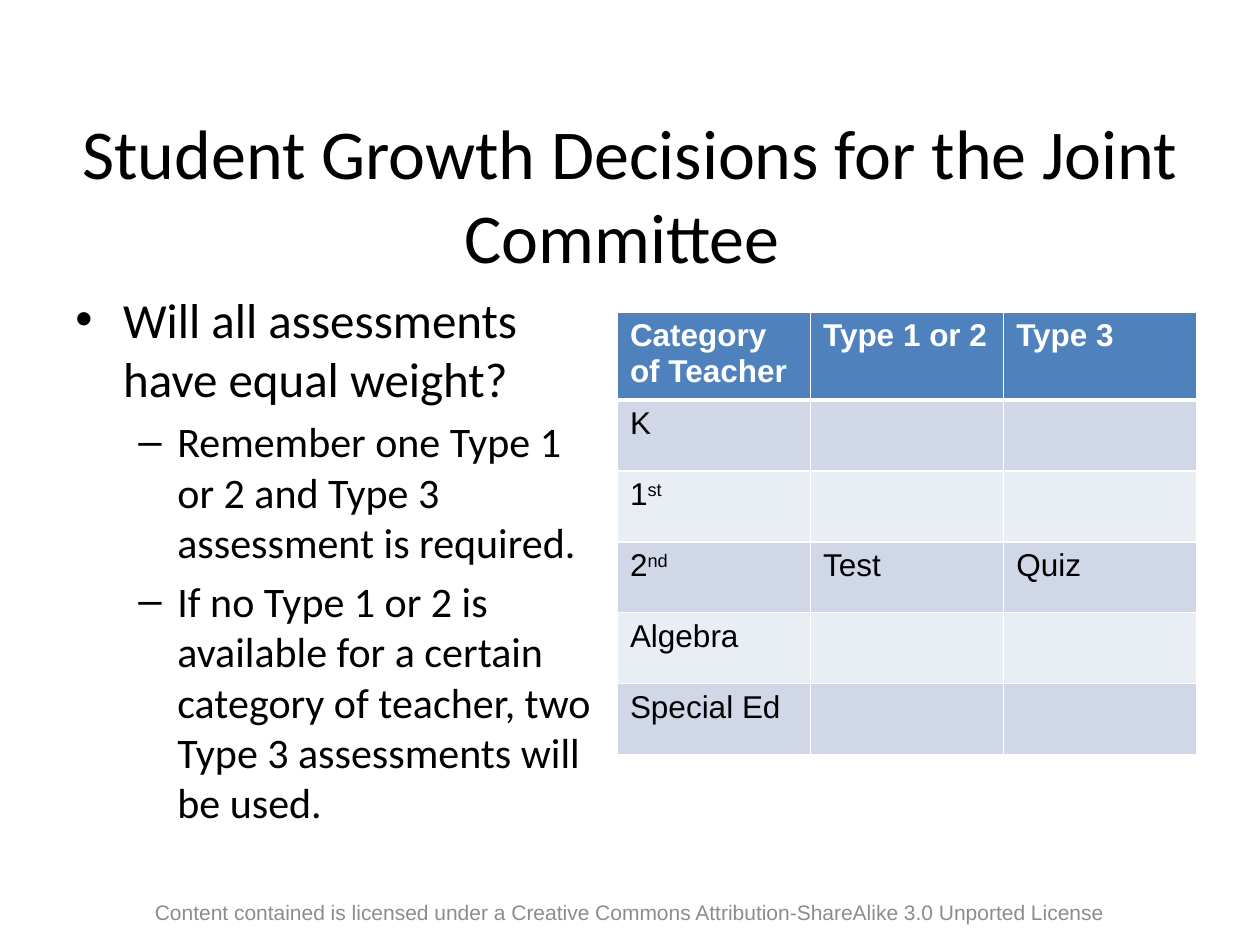
from lxml import etree
from pptx import Presentation, util as u
from pptx.dml.color import RGBColor
from pptx.enum import text
from pptx.oxml.ns import qn

WIDTH, HEIGHT = 10, 7.5
BLACK, WHITE, GREY = "000000", "FFFFFF", "8C8C8C"
HEADER, BANDS = "4F81BD", ("D0D8E8", "E9EDF4")

QUESTIONS = [
    (0, "Will all assessments have equal weight?"),
    (1, "Remember one Type 1 or 2 and Type 3 assessment is required."),
    (1, "If no Type 1 or 2 is available for a certain category of teacher, "
        "two Type 3 assessments will be used."),
]
BULLETS = [("•", 28, 0.38, 0.38), ("–", 24, 0.81, 0.31)]
ASSESSMENTS = [
    [("Category of Teacher",), ("Type 1 or 2",), ("Type 3",)],
    [("K",), (), ()],
    [("1", "st"), (), ()],
    [("2", "nd"), ("Test",), ("Quiz",)],
    [("Algebra",), (), ()],
    [("Special Ed",), (), ()],
]


def color(value):
    return RGBColor.from_string(value)


def place(left, top, width, height):
    return [u.Inches(part) for part in
            (left * WIDTH, top * HEIGHT, width * WIDTH, height * HEIGHT)]


def set_font(para, name, size, fill, bold=False):
    para.font.name = name
    para.font.size = u.Pt(size)
    para.font.bold = bold
    para.font.color.rgb = color(fill)


def add_frame(page, area, anchor):
    frame = page.shapes.add_textbox(*place(*area)).text_frame
    frame.word_wrap = True
    frame.vertical_anchor = anchor
    return frame


def add_centered(page, area, words, name, size, fill):
    para = add_frame(page, area, text.MSO_ANCHOR.MIDDLE).paragraphs[0]
    para.add_run().text = words
    para.alignment = text.PP_ALIGN.CENTER
    set_font(para, name, size, fill)


def add_bullet(para, mark, indent, hanging):
    props = para._p.get_or_add_pPr()
    props.set("marL", str(u.Inches(indent)))
    props.set("indent", str(-u.Inches(hanging)))
    etree.SubElement(props, qn("a:buFont"), typeface="Arial")
    etree.SubElement(props, qn("a:buChar"), char=mark)


def add_questions(page, area):
    frame = add_frame(page, area, text.MSO_ANCHOR.TOP)
    for index, (level, words) in enumerate(QUESTIONS):
        para = frame.add_paragraph() if index else frame.paragraphs[0]
        mark, size, indent, hanging = BULLETS[level]
        para.add_run().text = words
        para.level = level
        if index:
            para.space_before = u.Pt(size * 0.2)
        add_bullet(para, mark, indent, hanging)
        set_font(para, "Calibri", size, BLACK)


def add_borders(cell, row):
    props = cell._tc.get_or_add_tcPr()
    heavy = {0: "B", 1: "T"}.get(row)
    for side in "LRTB":
        width = u.Pt(3 if side == heavy else 1)
        line = etree.SubElement(props, qn(f"a:ln{side}"), w=str(width))
        fill = etree.SubElement(line, qn("a:solidFill"))
        etree.SubElement(fill, qn("a:srgbClr"), val=WHITE)


def fill_cell(cell, row, parts):
    add_borders(cell, row)
    cell.fill.solid()
    cell.fill.fore_color.rgb = color(BANDS[(row - 1) % 2] if row else HEADER)
    para = cell.text_frame.paragraphs[0]
    for index, words in enumerate(parts):
        span = para.add_run()
        span.text = words
        if index:
            span._r.get_or_add_rPr().set("baseline", "30000")
    set_font(para, "Arial", 18, BLACK if row else WHITE, not row)


def add_assessments(page, area):
    rows, columns = len(ASSESSMENTS), len(ASSESSMENTS[0])
    table = page.shapes.add_table(rows, columns, *place(*area)).table
    for row, entries in enumerate(ASSESSMENTS):
        for column, parts in enumerate(entries):
            fill_cell(table.cell(row, column), row, parts)


def main():
    deck = Presentation()
    deck.slide_width, deck.slide_height = u.Inches(WIDTH), u.Inches(HEIGHT)
    page = deck.slides.add_slide(deck.slide_layouts[6])
    add_centered(page, (0.05, 0.12, 0.9, 0.17),
                 "Student Growth Decisions for the Joint Committee ",
                 "Calibri", 40, BLACK)
    add_questions(page, (0.05, 0.3, 0.44, 0.59))
    add_assessments(page, (0.49, 0.33, 0.46, 0.45))
    add_centered(page, (0.1, 0.93, 0.8, 0.07),
                 "Content contained is licensed under a Creative Commons "
                 "Attribution-ShareAlike 3.0 Unported License",
                 "Arial", 12, GREY)
    deck.save("out.pptx")


if __name__ == "__main__":
    main()
